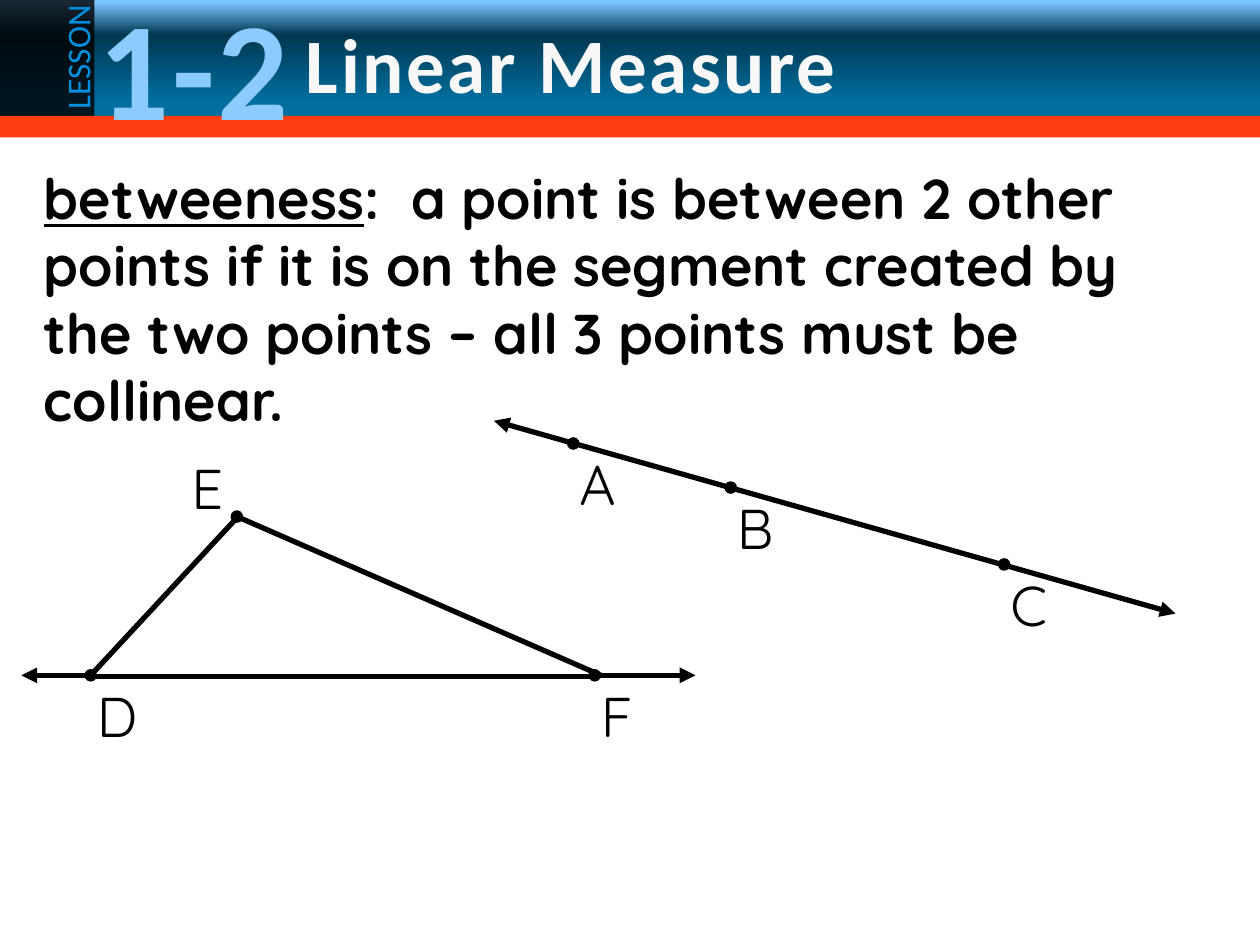
"""Builds the Linear Measure slide on betweeness."""
from lxml import etree
from pptx import Presentation, util as u
from pptx.dml.color import RGBColor
from pptx.enum import shapes as s, text as t
from pptx.oxml.ns import qn

HUES = {"sky": "7DC4FF", "navy": "003750", "sea": "006E9E", "black": "000000",
        "red": "FF3E11", "blue": "008FDE", "pale": "8BCBFF", "white": "F8F8F8"}
STOPS = [(2, "sky"), (30, "navy"), (87, "sea"), (100, "sea"), (100, "sky")]
TERM = "betweeness"
RULE = (":  a point is between 2 other points if it is on the segment created by "
        "the two points – all 3 points must be collinear.")
DOT = 0.1
BELOW = (0, 0.05)
FIGURES = [
    {"lines": [((3.92, 3.34), (9.33, 4.87), ("headEnd", "tailEnd"))],
     "points": [("A", 4.5, 3.47, BELOW), ("B", 5.75, 3.82, BELOW),
                ("C", 7.92, 4.43, BELOW)]},
    {"lines": [((4.69, 5.36), (5.52, 5.36), ("tailEnd",)),
               ((0.75, 5.36), (0.17, 5.36), ("tailEnd",)),
               ((0.72, 5.36), (1.88, 4.11), ()),
               ((1.88, 4.1), (4.77, 5.36), ()),
               ((0.72, 5.37), (4.72, 5.37), ())],
     "points": [("D", 0.67, 5.31, BELOW), ("E", 1.83, 4.05, (-0.41, -0.5)),
                ("F", 4.67, 5.31, BELOW)]},
]


def hue(name):
    return RGBColor.from_string(HUES[name])


def sub(node, tag, **attrs):
    return etree.SubElement(node, qn("a:" + tag), attrs)


def shape(home, kind, box, tint):
    item = home.add_shape(kind, *map(u.Inches, box))
    item.shadow.inherit = False
    item.line.fill.background()
    item.fill.solid()
    item.fill.fore_color.rgb = hue(tint)
    return item


def label(home, words, box, size, face="Quicksand", tint="black", bold=False, wrap=True):
    item = home.add_textbox(*map(u.Inches, box))
    item.text_frame.word_wrap = wrap
    para = item.text_frame.paragraphs[0]
    for word in words:
        run = para.add_run()
        run.text = word
        run.font.color.rgb = hue(tint)
    para.font.size, para.font.name, para.font.bold = u.Pt(size), face, bold
    for run in para.runs:
        run.font.size, run.font.name, run.font.bold = u.Pt(size), face, bold
    return item, para


def space(para):
    props = para.runs[0].font._element
    props.set("spc", "150")
    return props


def line(home, start, end, heads):
    item = home.add_connector(s.MSO_CONNECTOR.STRAIGHT, *map(u.Inches, start + end))
    item.line.color.rgb = hue("black")
    item.line.width = u.Pt(3)
    for head in heads:
        sub(item.line._get_or_add_ln(), head, type="triangle")
    sub(item._element.spPr, "effectLst")


def banner(home):
    rect = s.MSO_SHAPE.RECTANGLE
    band = shape(home, rect, (0, 0, 10, 0.92), "sea")
    band.fill.gradient()
    band.fill.gradient_angle = 270
    stops = band._element.spPr.find(".//" + qn("a:gsLst"))
    stops[:] = []
    for place, tint in STOPS:
        sub(sub(stops, "gs", pos=str(place * 1000)), "srgbClr", val=HUES[tint])
    shade = shape(home, rect, (0, 0, 0.75, 0.92), "black")
    sub(shade._element.spPr.find(".//" + qn("a:srgbClr")), "alpha", val="80000")
    shape(home, rect, (0, 0.92, 10, 0.17), "red")

    tag, _ = label(home, ["LESSON"], (0.09, 0.23, 1.05, 0.42), 19, "Calibri", "blue")
    tag.rotation = 270
    _, para = label(home, ["1-2"], (0.67, -0.2, 1.74, 1.45), 80, "Calibri", "pale", True, False)
    para.alignment = t.PP_ALIGN.CENTER
    space(para)
    _, para = label(home, ["Linear Measure"], (2.33, 0.08, 4.47, 0.84), 44,
                    "Calibri", "white", True, False)
    props = space(para)
    glow = sub(props, "effectLst")
    props.find(qn("a:solidFill")).addnext(glow)
    cast = sub(glow, "outerShdw", blurRad="38100", dist="38100", dir="2700000")
    sub(sub(cast, "srgbClr", val=HUES["black"]), "alpha", val="60000")


def figure(home, lines, points):
    group = home.add_group_shape().shapes
    for start, end, heads in lines:
        line(group, start, end, heads)
    for name, left, top, (right, down) in points:
        label(group, [name], (left + right, top + down, 0.75, 0.63), 32)
        shape(group, s.MSO_SHAPE.OVAL, (left, top, DOT, DOT), "black")


def main():
    deck = Presentation()
    deck.slide_width, deck.slide_height = u.Inches(10), u.Inches(7.5)
    home = deck.slides.add_slide(deck.slide_layouts[6]).shapes
    banner(home)
    _, para = label(home, [TERM, RULE], (0.25, 1.25, 9.5, 1.58), 32, bold=True)
    para.runs[0].font.underline = True
    for item in FIGURES:
        figure(home, **item)
    deck.save("out.pptx")


if __name__ == "__main__":
    main()
